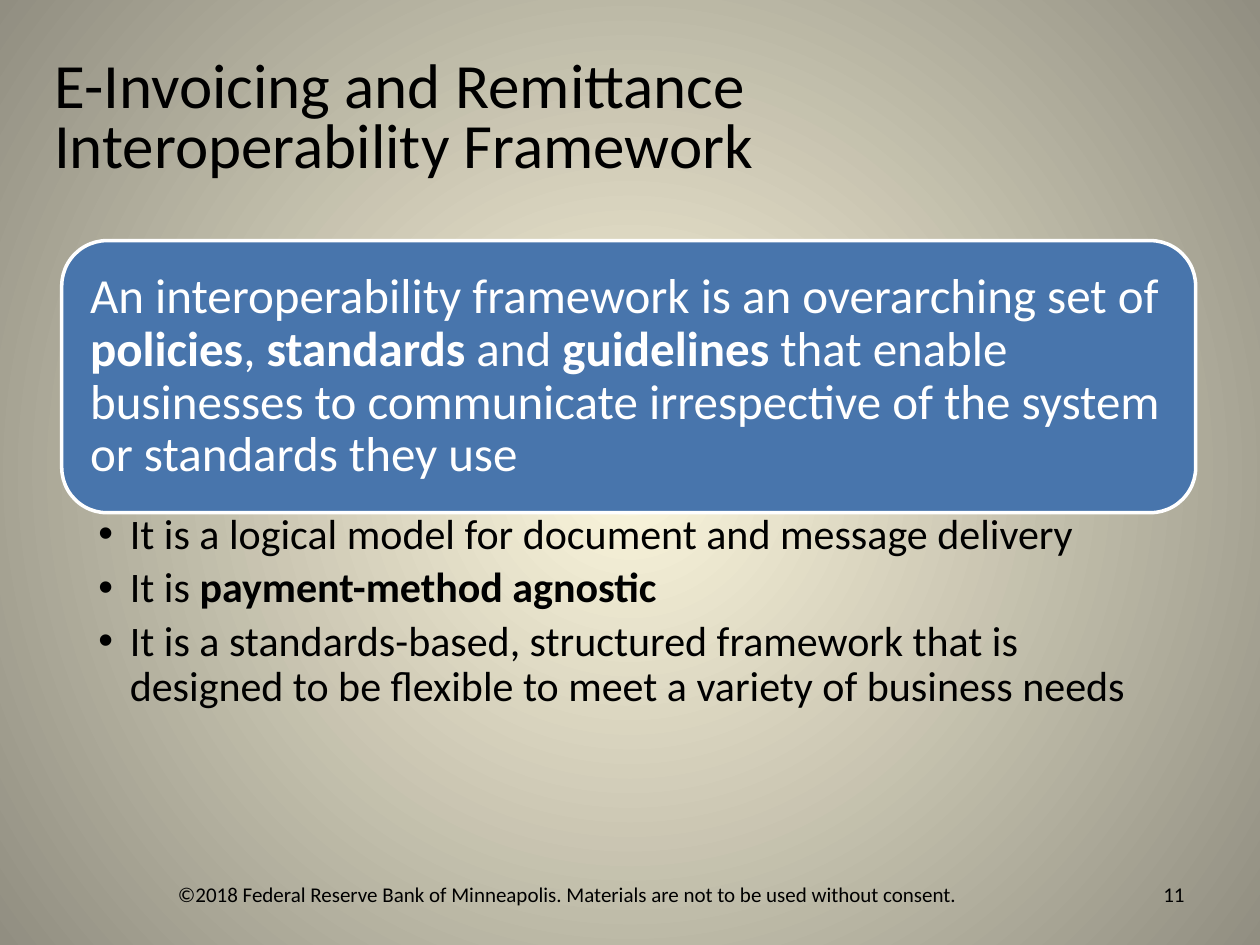
from lxml import etree
from pptx import Presentation
from pptx.dml.color import RGBColor
from pptx.enum.shapes import MSO_SHAPE
from pptx.enum.text import MSO_ANCHOR, MSO_AUTO_SIZE, PP_ALIGN
from pptx.oxml import parse_xml
from pptx.oxml.ns import nsdecls, qn
from pptx.util import Inches, Pt

BLACK = RGBColor(0x00, 0x00, 0x00)
WHITE = RGBColor(0xFF, 0xFF, 0xFF)
BLUE = RGBColor(0x48, 0x75, 0xAC)
CREAM = RGBColor(0xFC, 0xF7, 0xDD)
TAUPE = RGBColor(0x91, 0x8E, 0x81)


def write(para, *parts, size=24, color=BLACK, align=PP_ALIGN.LEFT,
          line=1.0, after=0, bullet=False):
    if bullet:
        properties = para._p.get_or_add_pPr()
        properties.set("marL", str(Inches(0.25)))
        properties.set("indent", str(Inches(-0.25)))
        etree.SubElement(properties, qn("a:buChar"), char="•")
    para.alignment = align
    para.line_spacing = line
    para.space_before = Pt(0)
    para.space_after = Pt(after)
    for index, text in enumerate(parts):
        span = para.add_run()
        span.text = text
        span.font.name = "Calibri"
        span.font.size = Pt(size)
        span.font.bold = index % 2 == 1
        span.font.color.rgb = color


def place(box, left, top, width, height, insets=(0.1, 0.05, 0.1, 0.05),
          anchor=MSO_ANCHOR.TOP):
    box.left, box.top = Inches(left), Inches(top)
    box.width, box.height = Inches(width), Inches(height)
    frame = box.text_frame
    frame.word_wrap = True
    frame.auto_size = MSO_AUTO_SIZE.NONE
    frame.vertical_anchor = anchor
    (frame.margin_left, frame.margin_top,
     frame.margin_right, frame.margin_bottom) = map(Inches, insets)
    return frame


deck = Presentation()
deck.slide_width, deck.slide_height = Inches(10), Inches(7.5)
page = deck.slides.add_slide(deck.slide_layouts[1])

backdrop = page.background.fill
backdrop.gradient()
for stop, color, position in zip(backdrop.gradient_stops, (CREAM, TAUPE), (0, 1)):
    stop.color.rgb = color
    stop.position = position
gradient = page.background._cSld.find(".//" + qn("a:gradFill"))
gradient.replace(gradient.find(qn("a:lin")), parse_xml(
    f'<a:path {nsdecls("a")} path="circle">'
    '<a:fillToRect l="50000" t="50000" r="50000" b="50000"/></a:path>'))

title = place(page.shapes.title, 0.33, 0.33, 7.58, 1.25, anchor=MSO_ANCHOR.MIDDLE)
write(title.paragraphs[0], "E-Invoicing and Remittance Interoperability Framework",
      size=36, line=0.8)

panel = page.shapes.add_shape(MSO_SHAPE.ROUNDED_RECTANGLE,
                              Inches(0.49), Inches(1.91), Inches(9), Inches(2.16))
panel.shadow.inherit = False
panel.fill.solid()
panel.fill.fore_color.rgb = BLUE
panel.line.color.rgb = WHITE
panel.line.width = Pt(2)
definition = place(panel, 0.49, 1.91, 9, 2.16, (0.12,) * 4, MSO_ANCHOR.MIDDLE)
write(definition.paragraphs[0],
      "An interoperability framework is an overarching set of ", "policies", ", ",
      "standards", " and ", "guidelines",
      " that enable businesses to communicate irrespective of the system "
      "or standards they use",
      size=28, color=WHITE, line=0.9)

features = place(page.placeholders[1], 0.49, 4.04, 9, 1.73, (0.29, 0.03, 0.19, 0.03))
points = [
    ("It is a logical model for document and message delivery",),
    ("It is ", "payment-method agnostic"),
    ("It is a standards-based, structured framework that is designed to be "
     "flexible to meet a variety of business needs",),
]
for index, parts in enumerate(points):
    para = features.add_paragraph() if index else features.paragraphs[0]
    write(para, *parts, line=0.9, after=4.8, bullet=True)

footers = [
    (0.42, 8.17, PP_ALIGN.CENTER, "©2018 Federal Reserve Bank of Minneapolis. "
     "Materials are not to be used without consent."),
    (8.58, 0.92, PP_ALIGN.RIGHT, "11"),
]
for left, width, align, text in footers:
    box = page.shapes.add_textbox(0, 0, 0, 0)
    footer = place(box, left, 6.95, width, 0.4)
    write(footer.paragraphs[0], text, size=12, align=align)

deck.save("out.pptx")
